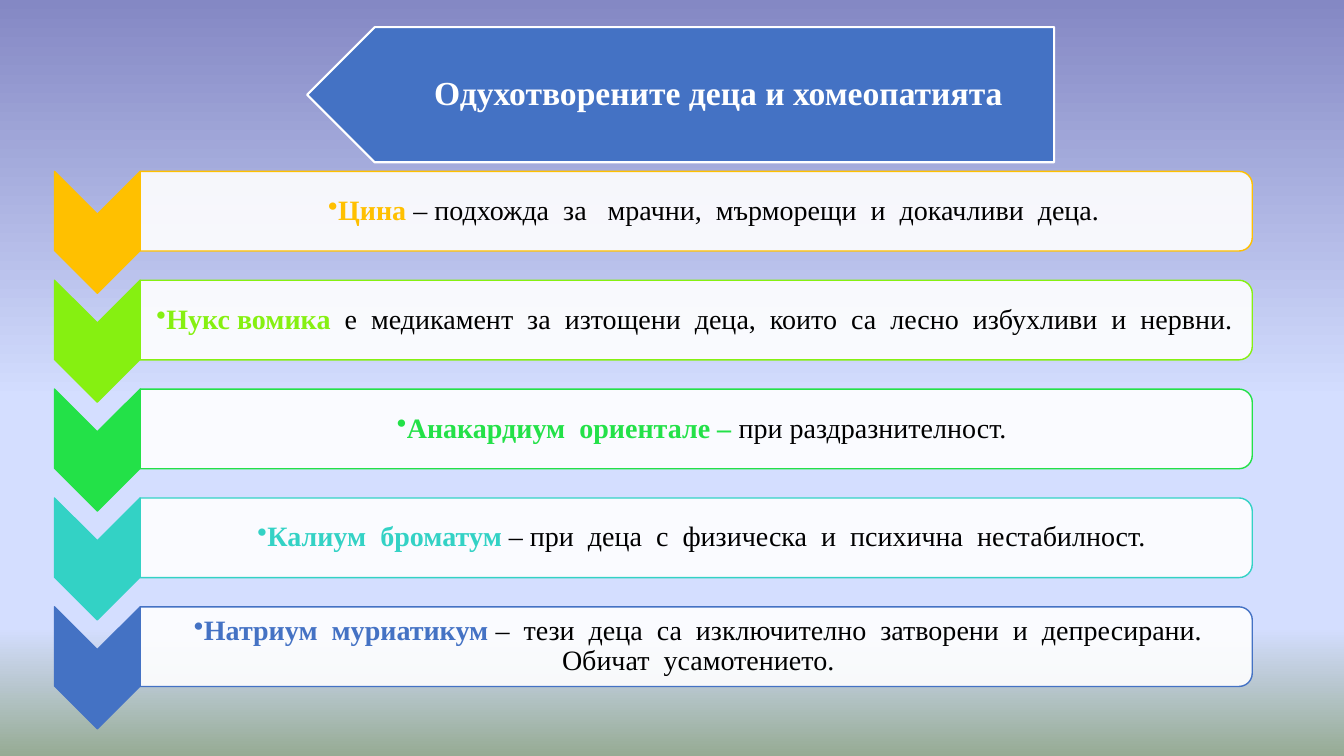
import pptx
import pptx.util
import pptx.dml.color
import pptx.enum.shapes
import pptx.enum.text
import pptx.oxml
import pptx.oxml.ns
from lxml import etree

Inches, Pt = pptx.util.Inches, pptx.util.Pt
SHAPE = pptx.enum.shapes.MSO_SHAPE
qn = pptx.oxml.ns.qn

# Content
TITLE = "Одухотворените деца и хомеопатията"
# remedy, description, colour, left margin of the paragraph
REMEDIES = [
    ("Цина", " – подхожда  за   мрачни,  мърморещи  и  докачливи  деца. ", "FFC000", 0.31),
    ("Нукс вомика  ", "е  медикамент  за  изтощени  деца,  които  са  лесно  избухливи  и  нервни.  ",
     "86F011", 0),
    ("Анакардиум  ориентале – ", "при раздразнителност.", "23E148", 0),
    ("Калиум  броматум ", "– при  деца  с  физическа  и  психична  нестабилност.", "33D2C5", 0),
    ("Натриум  муриатикум ",
     "–  тези  деца  са  изключително  затворени  и  депресирани.  Обичат  усамотението. ",
     "4472C4", 0),
]
SKY = [(0, "8488C4"), (53, "D4DEFF"), (83, "D4DEFF"), (100, "96AB94")]

# Layout in inches
FIRST_ROW, ROW_PITCH = 1.74, 1.08
TEXT_LEFT, TEXT_W, TEXT_H = 1.39, 10.99, 0.71
BAR_LENGTH, BAR_H = 11.03, 0.79
CHEVRON_LENGTH, CHEVRON_W = 1.21, 0.85
CHEVRON_X, CHEVRON_DROP = 0.965, 0.21

FONT = {"name": "Times New Roman"}
FRAME = {"word_wrap": True, "vertical_anchor": pptx.enum.text.MSO_ANCHOR.MIDDLE}
PARAGRAPH = {"alignment": pptx.enum.text.PP_ALIGN.CENTER, "line_spacing": 0.9}
MARGINS = ("margin_left", "margin_top", "margin_right", "margin_bottom")


def colour(hex_text):
    return pptx.dml.color.RGBColor.from_string(hex_text)


def assign(target, values):
    for key, value in values.items():
        setattr(target, key, value)


def add_turned(kind, centre_x, centre_y, width, height, turn, fill, line, weight):
    """Add a preset shape turned about its centre."""
    part = slide.shapes.add_shape(kind, Inches(centre_x - width / 2), Inches(centre_y - height / 2),
                                  Inches(width), Inches(height))
    part.rotation = turn
    part.shadow.inherit = False
    part.fill.solid()
    part.fill.fore_color.rgb = colour(fill)
    part.line.color.rgb = colour(line)
    part.line.width = Pt(weight)
    return part


def add_text(box, insets, runs, size):
    """Add a centred line of (text, colour, bold) runs and return its paragraph."""
    frame = slide.shapes.add_textbox(*map(Inches, box)).text_frame
    assign(frame, FRAME)
    assign(frame, dict(zip(MARGINS, map(Inches, insets))))
    paragraph = frame.paragraphs[0]
    assign(paragraph, PARAGRAPH)
    for words, shade, bold in runs:
        run = paragraph.add_run()
        run.text = words
        assign(run.font, FONT | {"size": Pt(size), "bold": bold})
        run.font.color.rgb = colour(shade)
    return paragraph


deck = pptx.Presentation()
deck.slide_width, deck.slide_height = Inches(13.33), Inches(7.5)
slide = deck.slides.add_slide(deck.slide_layouts[6])

# Background gradient, top to bottom
sky = slide.background.fill
sky.gradient()
sky.gradient_angle = 270
stops = slide.background._cSld.find(".//" + qn("a:gsLst"))
for stop in list(stops):
    stops.remove(stop)
for percent, shade in SKY:
    stop = etree.SubElement(stops, qn("a:gs"), pos=str(percent * 1000))
    etree.SubElement(stop, qn("a:srgbClr"), val=shade)

# Title arrow
add_turned(SHAPE.PENTAGON, 6.75, 0.94, 7.41, 1.34, 180, "4472C4", "FFFFFF", 1.5)
add_text((3.39, 0.27, 7.07, 1.34), (0.59, 0.1, 0.19, 0.1), [(TITLE, "FFFFFF", True)], 24)

# Remedy rows: chevron, bar and bulleted text
for row, (remedy, description, shade, indent) in enumerate(REMEDIES):
    top = FIRST_ROW + row * ROW_PITCH
    middle = top + TEXT_H / 2
    add_turned(SHAPE.CHEVRON, CHEVRON_X, middle + CHEVRON_DROP, CHEVRON_LENGTH, CHEVRON_W, 90,
               shade, shade, 1)
    bar = add_turned(SHAPE.ROUND_2_SAME_RECTANGLE, TEXT_LEFT + BAR_LENGTH / 2, middle,
                     BAR_H, BAR_LENGTH, 90, "FFFFFF", shade, 1)
    white = bar.fill._xPr.find(qn("a:solidFill"))[0]
    etree.SubElement(white, qn("a:alpha"), val="90000")
    line = add_text((TEXT_LEFT, top, TEXT_W, TEXT_H), (0.16, 0.01, 0.01, 0.01),
                    [(remedy, shade, True), (description, "000000", False)], 20)
    line.level = 1
    properties = line._p.get_or_add_pPr()
    properties.set("marL", str(Inches(indent)))
    properties.set("indent", "0")
    etree.SubElement(properties, qn("a:buChar"), char="•")

deck.save("out.pptx")
